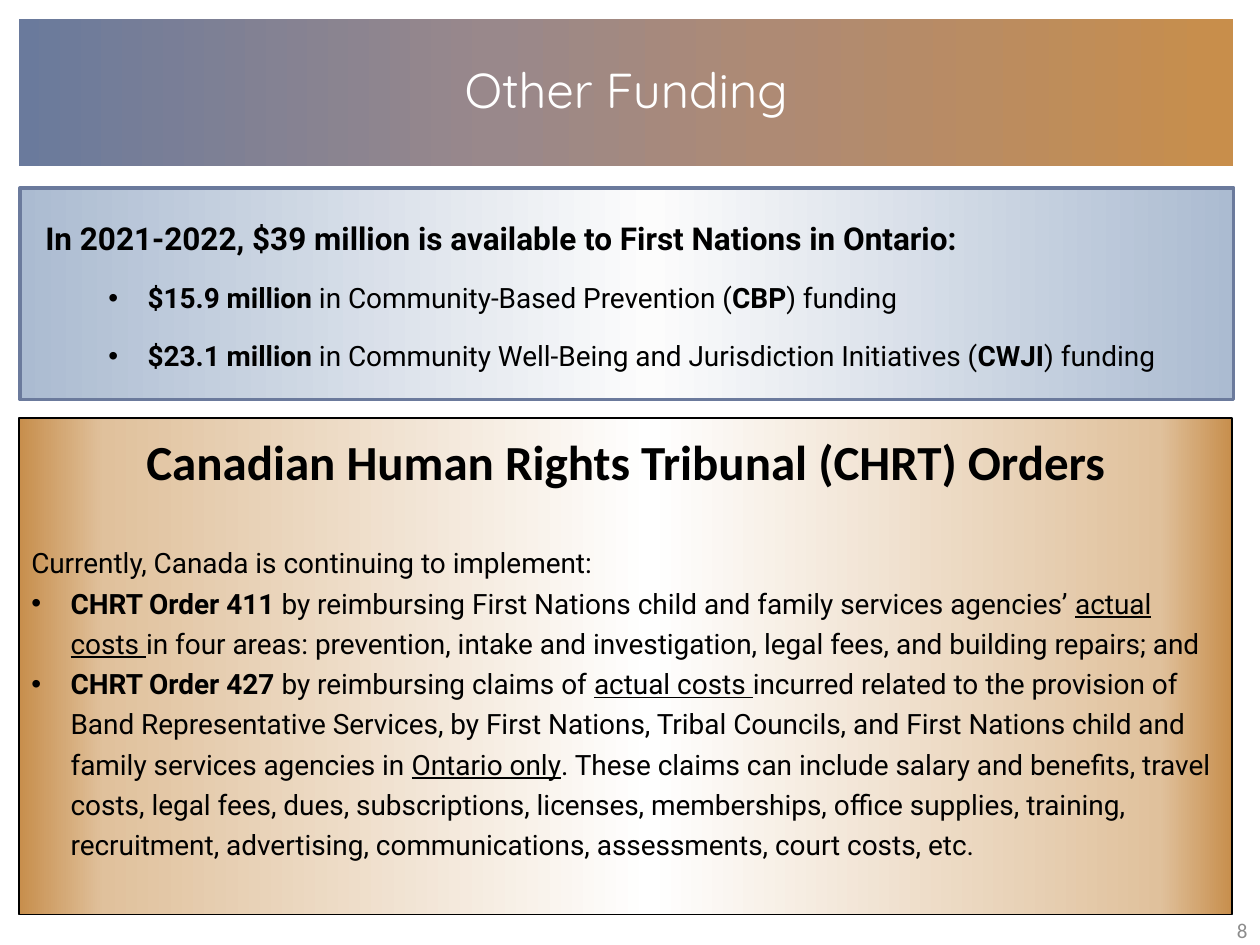
from pptx import Presentation
from pptx.dml.color import RGBColor
from pptx.enum.shapes import MSO_SHAPE
from pptx.enum.text import MSO_ANCHOR, MSO_AUTO_SIZE, PP_ALIGN
from pptx.oxml import parse_xml
from pptx.oxml.ns import nsdecls, qn
from pptx.util import Pt

RECTANGLE = MSO_SHAPE.RECTANGLE
TOP, MIDDLE = MSO_ANCHOR.TOP, MSO_ANCHOR.MIDDLE
LEFT, CENTER, RIGHT = PP_ALIGN.LEFT, PP_ALIGN.CENTER, PP_ALIGN.RIGHT
NO_AUTOFIT = MSO_AUTO_SIZE.NONE

BLACK = RGBColor(0x00, 0x00, 0x00)
WHITE = RGBColor(0xFF, 0xFF, 0xFF)
OFF_WHITE = RGBColor(0xFC, 0xFC, 0xFC)
GRAY = RGBColor(0x8C, 0x8C, 0x8C)
SLATE = RGBColor(0x6A, 0x7A, 0x9C)
SLATE_LINE = RGBColor(0x6B, 0x7A, 0x9C)
MAUVE = RGBColor(0x99, 0x88, 0x8B)
CLAY = RGBColor(0xAE, 0x8A, 0x74)
OCHRE = RGBColor(0xC8, 0x8E, 0x4B)
OCHRE_EDGE = RGBColor(0xC7, 0x8E, 0x4C)
SAND = RGBColor(0xE0, 0xC1, 0x9C)
PALE_BLUE = RGBColor(0xAB, 0xBB, 0xD1)

TITLE_STOPS = [(0, SLATE), (39, MAUVE), (62, CLAY), (100, OCHRE)]
FUNDING_STOPS = [(0, PALE_BLUE), (52, OFF_WHITE), (100, PALE_BLUE)]
ORDERS_STOPS = [(0, OCHRE_EDGE), (7, SAND), (52, WHITE), (94, SAND), (100, OCHRE_EDGE)]

# Each span is (text, style): "b" is bold, "u" is underlined.
FUNDING_ITEMS = [
    [("$15.9 million", "b"), (" in Community-Based Prevention (", ""),
     ("CBP", "b"), (") funding", "")],
    [("$23.1 million", "b"),
     (" in Community Well-Being and Jurisdiction Initiatives (", ""),
     ("CWJI", "b"), (") funding", "")],
]
ORDERS_ITEMS = [
    [("CHRT Order 411 ", "b"),
     ("by reimbursing First Nations child and family services agencies’ ", ""),
     ("actual costs ", "u"),
     ("in four areas: prevention, intake and investigation, legal fees, "
      "and building repairs; and", "")],
    [("CHRT Order 427 ", "b"), ("by reimbursing claims of ", ""),
     ("actual costs ", "u"),
     ("incurred related to the provision of Band Representative Services, "
      "by First Nations, Tribal Councils, and First Nations child and family "
      "services agencies in ", ""),
     ("Ontario only", "u"),
     (". These claims can include salary and benefits, travel costs, legal fees, "
      "dues, subscriptions, licenses, memberships, office supplies, training, "
      "recruitment, advertising, communications, assessments, court costs, etc.", "")],
]


def place(box, left, top, width, height):
    box.left, box.top, box.width, box.height = Pt(left), Pt(top), Pt(width), Pt(height)


def fill_gradient(box, stops):
    """Fill from left to right; stops are (percent, colour) pairs."""
    box.fill.gradient()
    box.fill.gradient_angle = 0
    stop_list = box.element.spPr.find(qn("a:gradFill")).find(qn("a:gsLst"))
    for stop in list(stop_list):
        stop_list.remove(stop)
    for percent, color in stops:
        stop_list.append(parse_xml(
            f'<a:gs {nsdecls("a")} pos="{percent * 1000}">'
            f'<a:srgbClr val="{color}"/></a:gs>'))


def set_frame(box, anchor, insets=(7.2, 3.6, 7.2, 3.6)):
    frame = box.text_frame
    frame.word_wrap = True
    frame.auto_size = NO_AUTOFIT
    frame.vertical_anchor = anchor
    (frame.margin_left, frame.margin_top,
     frame.margin_right, frame.margin_bottom) = map(Pt, insets)
    return frame


def add_panel(page, bounds, stops, line_color, line_width, insets):
    panel = page.shapes.add_shape(RECTANGLE, *map(Pt, bounds))
    panel.shadow.inherit = False
    fill_gradient(panel, stops)
    panel.line.color.rgb = line_color
    panel.line.width = Pt(line_width)
    return set_frame(panel, TOP, insets)


def write(frame, spans, size, font="Roboto", color=BLACK, align=LEFT,
          spacing=1.0, before=0, after=0, indent=None):
    """Fill the next paragraph; an indent in points makes it a bullet."""
    first = frame.paragraphs[0]
    para = frame.add_paragraph() if first.runs else first
    if indent is not None:
        properties = para._p.get_or_add_pPr()
        properties.set("marL", str(Pt(indent)))
        properties.set("indent", str(-Pt(22.5)))
        properties.append(parse_xml(f'<a:buFont {nsdecls("a")} typeface="Arial"/>'))
        properties.append(parse_xml(f'<a:buChar {nsdecls("a")} char="•"/>'))
    para.alignment = align
    para.line_spacing = spacing
    para.space_before, para.space_after = Pt(before), Pt(after)
    for text, style in spans:
        span = para.add_run()
        span.text = text
        span.font.name = font
        span.font.size = Pt(size)
        span.font.color.rgb = color
        span.font.bold = "b" in style
        span.font.underline = "u" in style
    return para


def add_title(page):
    title = page.shapes.title
    place(title, 10.8, 10.8, 694, 84.2)
    fill_gradient(title, TITLE_STOPS)
    write(set_frame(title, MIDDLE), [("Other Funding", "")], 28,
          font="Quicksand", color=WHITE, align=CENTER, spacing=0.9)


def add_orders(page):
    frame = add_panel(page, (10.8, 239, 693.4, 283.7), ORDERS_STOPS, BLACK, 1,
                      (7.2, 7.5, 7.2, 3.6))
    write(frame, [("Canadian Human Rights Tribunal (CHRT) Orders", "b")], 28,
          font="Calibri", align=CENTER)
    write(frame, [("Currently, Canada is continuing to implement:", "")], 16,
          spacing=1.2, before=28)
    for spans in ORDERS_ITEMS:
        write(frame, spans, 16, spacing=1.2, indent=22.5)


def add_funding(page):
    frame = add_panel(page, (11.5, 107.3, 693.4, 121), FUNDING_STOPS, SLATE_LINE, 2,
                      (14.4, 15.5, 7.2, 3.6))
    heading = "In 2021-2022, $39 million is available to First Nations in Ontario:"
    write(frame, [(heading, "b")], 18, spacing=1.1, after=6)
    for spans in FUNDING_ITEMS:
        para = write(frame, spans, 16, spacing=1.1, before=6, after=6, indent=58.5)
        para.level = 1


def add_page_number(page):
    box = page.shapes.add_textbox(Pt(558), Pt(518.4), Pt(162), Pt(26.6))
    write(set_frame(box, MIDDLE), [("8", "")], 12, font="Calibri", color=GRAY, align=RIGHT)


def main():
    deck = Presentation()
    deck.slide_width, deck.slide_height = Pt(720), Pt(540)
    page = deck.slides.add_slide(deck.slide_layouts[5])
    add_page_number(page)
    add_title(page)
    add_orders(page)
    add_funding(page)
    deck.save("out.pptx")


if __name__ == "__main__":
    main()
